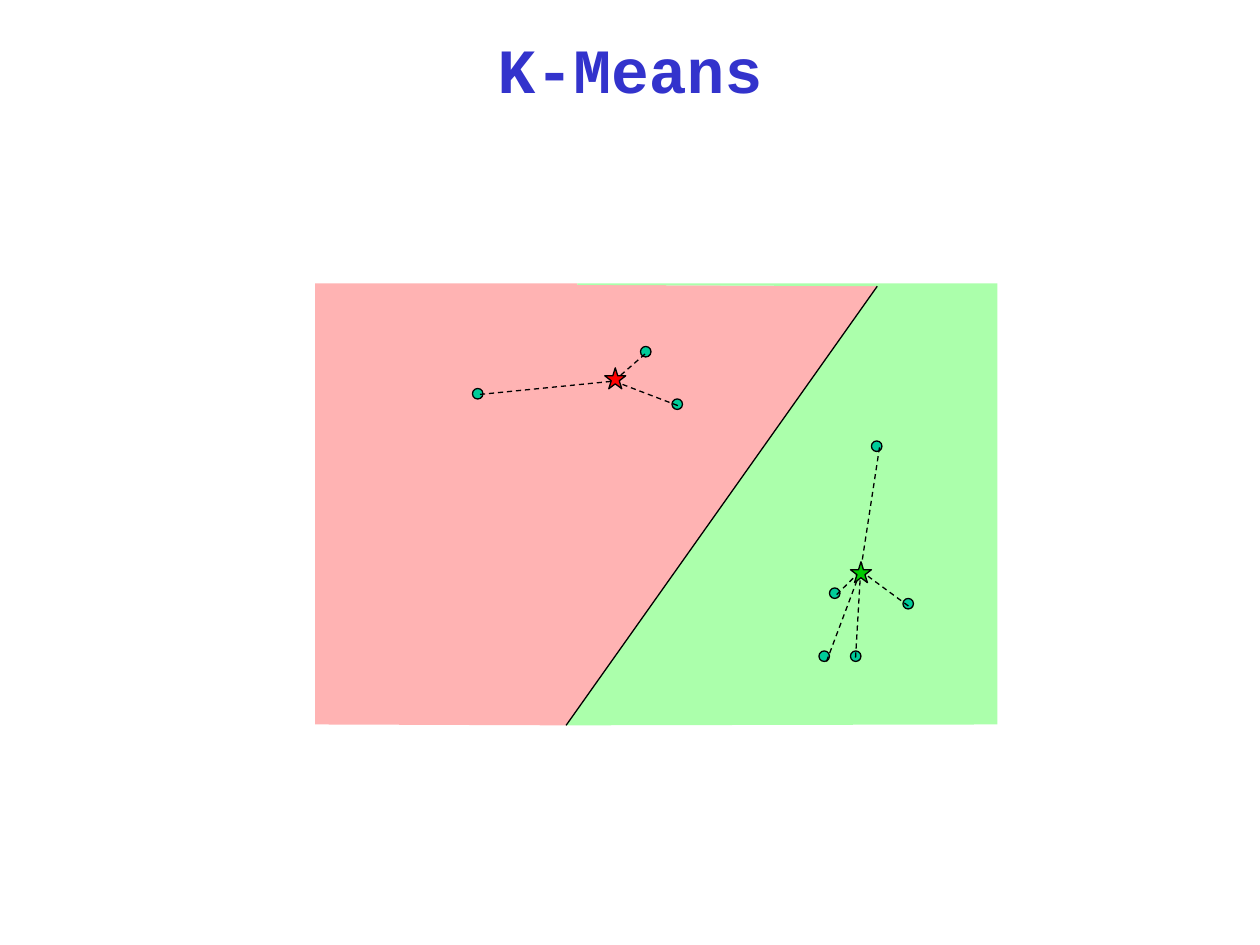
from pptx import Presentation
from pptx.dml.color import RGBColor
from pptx.enum.dml import MSO_LINE
from pptx.enum.shapes import MSO_CONNECTOR, MSO_SHAPE
from pptx.enum.text import MSO_ANCHOR, PP_ALIGN
from pptx.oxml.ns import qn
from pptx.util import Pt
from lxml import etree

TITLE_BLUE = RGBColor(0x33, 0x33, 0xCC)
BLACK = RGBColor(0x00, 0x00, 0x00)
PINK = RGBColor(0xFF, 0xB3, 0xB3)
LIGHT_GREEN = RGBColor(0xAB, 0xFF, 0xAB)
RED = RGBColor(0xFF, 0x00, 0x00)
GREEN = RGBColor(0x00, 0xCC, 0x00)
TEAL = RGBColor(0x00, 0xCC, 0x99)
DOT_SIZE = 6
STAR_SIZE = 12
LINE_WIDTH = 0.75

presentation = Presentation()
presentation.slide_width = Pt(720)
presentation.slide_height = Pt(540)
slide = presentation.slides.add_slide(presentation.slide_layouts[6])


def add_marker(kind, left, top, size, color):
    shape = slide.shapes.add_shape(kind, Pt(left), Pt(top), Pt(size), Pt(size))
    shape.shadow.inherit = False
    shape.fill.solid()
    shape.fill.fore_color.rgb = color
    shape.line.color.rgb = BLACK
    shape.line.width = Pt(LINE_WIDTH)


def add_line(start, end, dash=None):
    connector = slide.shapes.add_connector(
        MSO_CONNECTOR.STRAIGHT, *[Pt(value) for value in (*start, *end)])
    connector.line.color.rgb = BLACK
    connector.line.width = Pt(LINE_WIDTH)
    if dash:
        connector.line.dash_style = dash
    etree.SubElement(connector._element.spPr, qn("a:effectLst"))


# Title
title = slide.shapes.add_textbox(Pt(24), Pt(12), Pt(672), Pt(54))
title.text_frame.word_wrap = True
title.text_frame.vertical_anchor = MSO_ANCHOR.MIDDLE
paragraph = title.text_frame.paragraphs[0]
paragraph.alignment = PP_ALIGN.CENTER
run = paragraph.add_run()
run.text = "K-Means"
run.font.name = "Courier New"
run.font.size = Pt(36)
run.font.bold = True
run.font.color.rgb = TITLE_BLUE

# Cluster regions, sharing the decision boundary and a thin step at the top
boundary_bottom = (323.5, 414.5)
boundary_top = (501.3, 163.6)
shared_edge = [boundary_bottom, boundary_top, (330, 162.8), (330, 162)]
regions = [
    (PINK, [(180, 162), (180, 414)]),
    (LIGHT_GREEN, [(570, 162), (570, 414)]),
]
for color, outer_corners in regions:
    points = [(Pt(x), Pt(y)) for x, y in shared_edge + outer_corners]
    builder = slide.shapes.build_freeform(*points[0], scale=1.0)
    builder.add_line_segments(points[1:], close=True)
    region = builder.convert_to_shape()
    region.shadow.inherit = False
    region.fill.solid()
    region.fill.fore_color.rgb = color
    region.line.fill.background()

# Data points
dots = [(468, 372), (498, 252), (384, 228), (516, 342),
        (486, 372), (474, 336), (270, 222), (366, 198)]
for left, top in dots:
    add_marker(MSO_SHAPE.OVAL, left, top, DOT_SIZE, TEAL)

# Decision boundary
add_line(boundary_bottom, boundary_top)

# Each cluster: star corner, star colour, meeting point, far ends of its lines
clusters = [
    ((345.6, 210.2), RED, (350.8, 217.8),
     [(274.3, 225.4), (387.4, 231.8), (368.6, 202.3)]),
    ((486, 321), GREEN, (491.8, 326.2),
     [(472.3, 378), (488.9, 375.8), (519.1, 346.3), (502.6, 255.6), (478.1, 339.8)]),
]
for _, _, centroid, ends in clusters:
    for end in ends:
        add_line(end, centroid, MSO_LINE.DASH)
for (left, top), color, _, _ in clusters:
    add_marker(MSO_SHAPE.STAR_5_POINT, left, top, STAR_SIZE, color)

presentation.save("out.pptx")
